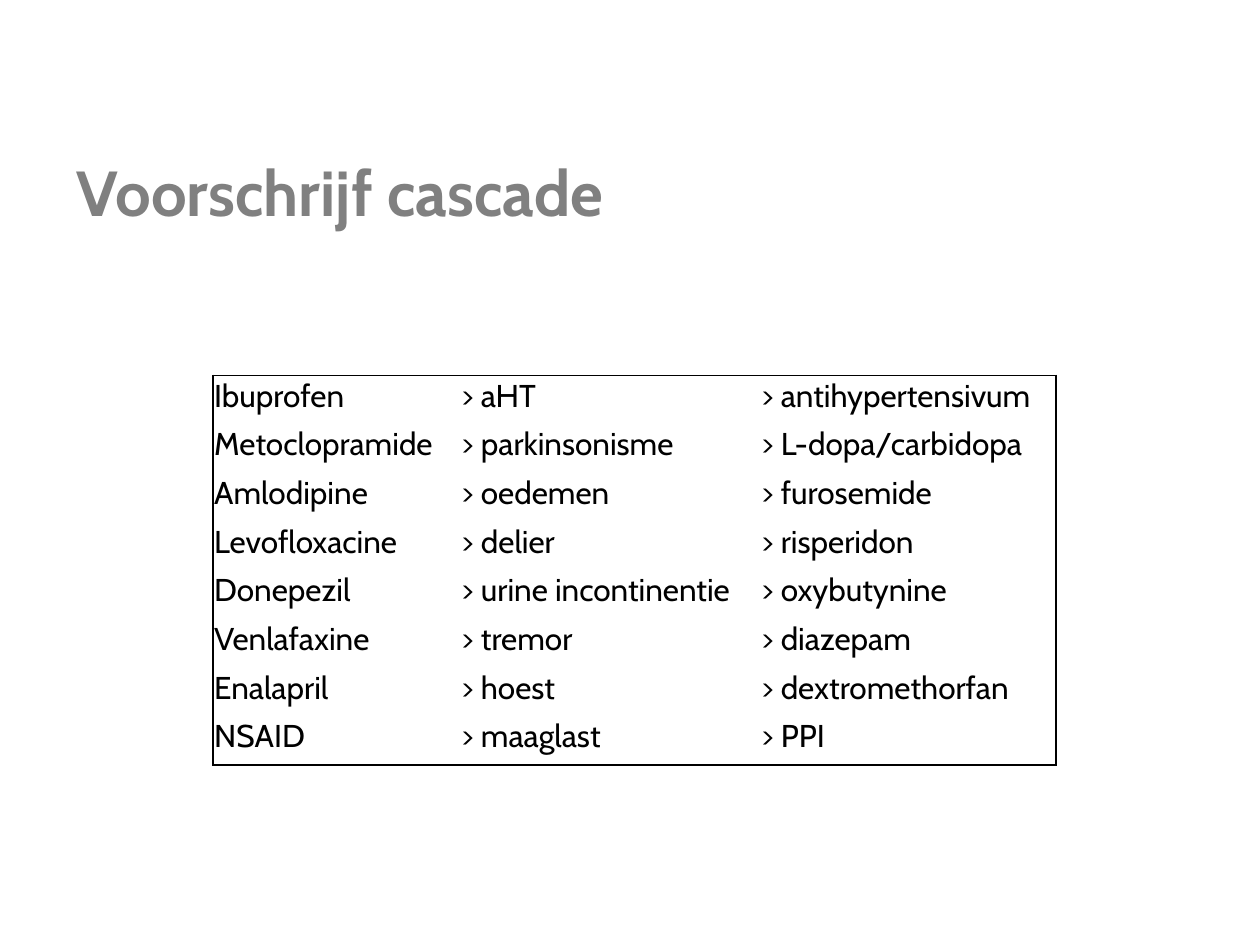
from dataclasses import dataclass
from typing import Any

from lxml.etree import SubElement
from pptx import Presentation
from pptx.dml.color import RGBColor
from pptx.enum.text import MSO_ANCHOR, MSO_AUTO_SIZE, PP_ALIGN
from pptx.oxml.ns import qn
from pptx.util import Inches, Pt


@dataclass(frozen=True)
class Theme:
    font: str = "Cabin"
    title_color: str = "808080"
    ink: str = "000000"
    title_size: float = 36.3
    cell_size: float = 18
    border_width: float = 1


@dataclass(frozen=True)
class Cascade:
    drug: str
    effect: str
    remedy: str

    def texts(self) -> list[str]:
        return [self.drug, f"> {self.effect}", f"> {self.remedy}"]


THEME = Theme()
CASCADES = [
    Cascade("Ibuprofen", "aHT", "antihypertensivum"),
    Cascade("Metoclopramide", "parkinsonisme", "L-dopa/carbidopa"),
    Cascade("Amlodipine", "oedemen", "furosemide"),
    Cascade("Levofloxacine", "delier", "risperidon"),
    Cascade("Donepezil", "urine incontinentie", "oxybutynine"),
    Cascade("Venlafaxine", "tremor", "diazepam"),
    Cascade("Enalapril", "hoest", "dextromethorfan"),
    Cascade("NSAID", "maaglast", "PPI"),
]
COLUMN_WIDTHS = [1.96, 2.38, 2.35]
TABLE_HEIGHT = 3.09


def apply(target: Any, values: dict[str, Any]) -> None:
    for name, value in values.items():
        setattr(target, name, value)


def write(para: Any, text: str, size: float, color: str, bold: bool) -> None:
    span = para.add_run()
    span.text = text
    apply(span.font, {"name": THEME.font, "size": Pt(size), "bold": bold})
    span.font.color.rgb = RGBColor.from_string(color)
    para.alignment = PP_ALIGN.LEFT


def draw_title(page: Any, text: str) -> None:
    title = page.shapes.title
    apply(title, {"left": Inches(0.5), "top": Inches(1.12),
                  "width": Inches(8.41), "height": Inches(0.79)})
    apply(title.text_frame, {
        "auto_size": MSO_AUTO_SIZE.NONE, "word_wrap": True,
        "vertical_anchor": MSO_ANCHOR.MIDDLE,
        "margin_left": Inches(0.11), "margin_right": Inches(0.11),
        "margin_top": Inches(0.06), "margin_bottom": Inches(0.06),
    })
    write(title.text_frame.paragraphs[0], text, THEME.title_size, THEME.title_color, True)


def draw_borders(cell: Any, edges: dict[str, bool]) -> None:
    properties = cell._tc.get_or_add_tcPr()
    for edge, visible in edges.items():
        line = SubElement(properties, qn(f"a:{edge}"), w=str(Pt(THEME.border_width)))
        if visible:
            fill = SubElement(line, qn("a:solidFill"))
            SubElement(fill, qn("a:srgbClr"), val=THEME.ink)
        else:
            SubElement(line, qn("a:noFill"))


def draw_table(page: Any, cascades: list[Cascade]) -> None:
    last_row, last_column = len(cascades) - 1, len(COLUMN_WIDTHS) - 1
    table = page.shapes.add_table(
        len(cascades), len(COLUMN_WIDTHS), Inches(1.69), Inches(2.98),
        Inches(sum(COLUMN_WIDTHS)), Inches(TABLE_HEIGHT),
    ).table
    apply(table, {"first_row": False, "horz_banding": False})
    for column, width in zip(table.columns, COLUMN_WIDTHS):
        column.width = Inches(width)
    for i, cascade in enumerate(cascades):
        table.rows[i].height = Inches(TABLE_HEIGHT / len(cascades))
        for j, text in enumerate(cascade.texts()):
            cell = table.cell(i, j)
            apply(cell, {
                "margin_left": Inches(0.01), "margin_right": Inches(0.01),
                "margin_top": Inches(0.01), "margin_bottom": 0,
                "vertical_anchor": MSO_ANCHOR.TOP,
            })
            draw_borders(cell, {"lnL": j == 0, "lnR": j == last_column,
                                "lnT": i == 0, "lnB": i == last_row})
            cell.fill.background()
            write(cell.text_frame.paragraphs[0], text, THEME.cell_size, THEME.ink, False)


def main() -> None:
    deck = Presentation()
    apply(deck, {"slide_width": Inches(10), "slide_height": Inches(7.5)})
    page = deck.slides.add_slide(deck.slide_layouts.get_by_name("Title Only"))
    draw_title(page, "Voorschrijf cascade")
    draw_table(page, CASCADES)
    deck.save("out.pptx")


if __name__ == "__main__":
    main()
